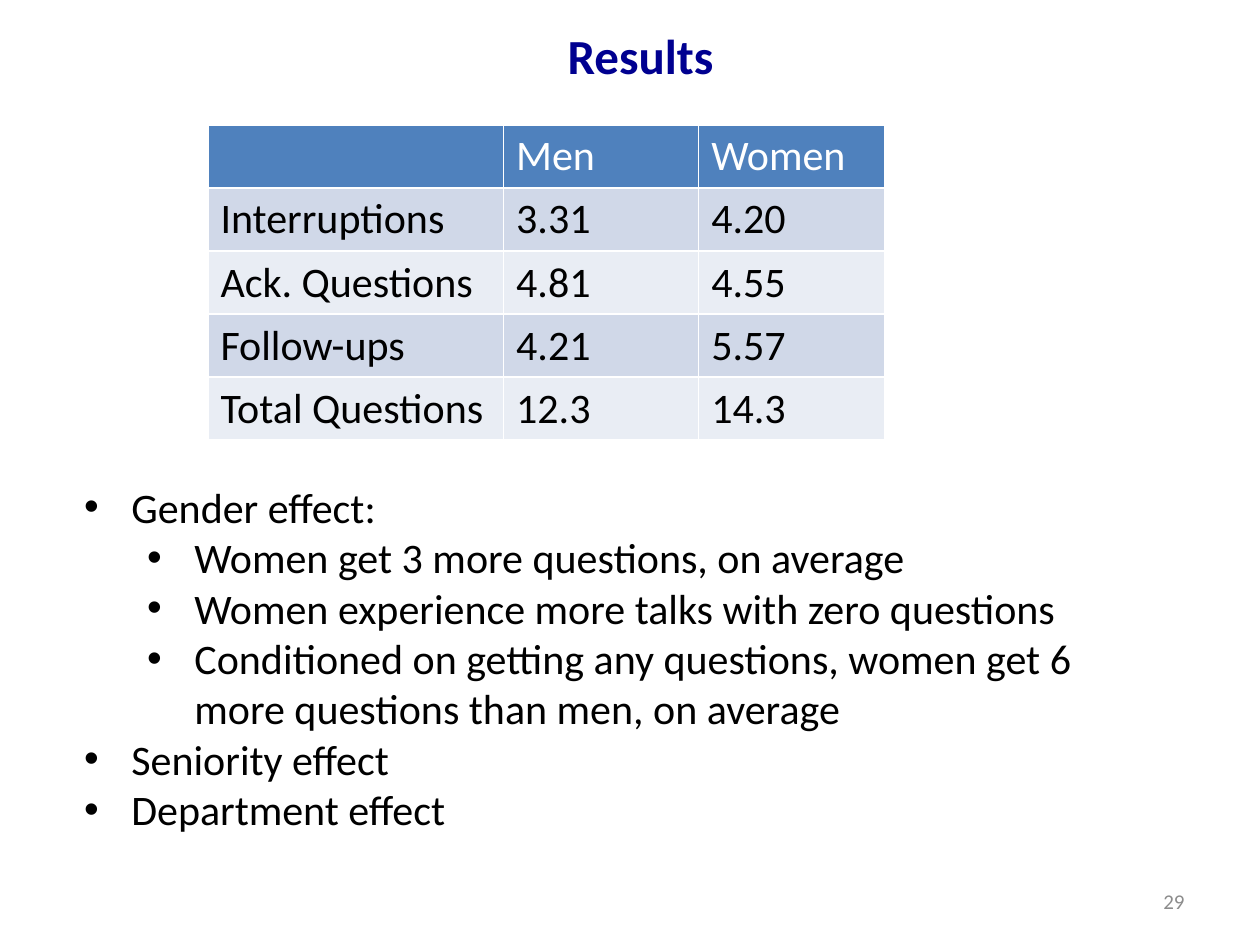
import dataclasses
import typing

import lxml.etree
import pptx
import pptx.dml.color
import pptx.enum.text
import pptx.oxml.ns
import pptx.util

Pt = pptx.util.Pt
Align = pptx.enum.text.PP_ALIGN
Anchor = pptx.enum.text.MSO_ANCHOR


@dataclasses.dataclass(frozen=True)
class Theme:
    font: str = "Calibri"
    title_size: float = 28
    body_size: float = 24
    number_size: float = 12
    title: str = "000090"
    text: str = "000000"
    number: str = "8C8C8C"
    header_text: str = "FFFFFF"
    header_fill: str = "4F81BD"
    band_fills: tuple[str, str] = ("D0D8E8", "E9EDF4")


@dataclasses.dataclass(frozen=True)
class Box:
    left: float
    top: float
    width: float
    height: float

    def lengths(self) -> tuple[int, ...]:
        return tuple(Pt(length) for length in dataclasses.astuple(self))


class Bullet(typing.NamedTuple):
    text: str
    level: int = 0


class Result(typing.NamedTuple):
    measure: str
    men: str
    women: str


THEME = Theme()
TITLE_BOX = Box(12, 0, 708, 62.5)
NUMBER_BOX = Box(516, 500.5, 168, 28.75)
TABLE_BOX = Box(118.8, 71.3, 387, 180)
BULLET_BOX = Box(41, 271.5, 612.5, 211)
COLUMN_WIDTHS = (169, 111.5, 106.5)
BULLET_HANG = 27
LEVEL_STEP = 36

RESULTS = (
    Result("", "Men", "Women"),
    Result("Interruptions", "3.31", "4.20"),
    Result("Ack. Questions", "4.81", "4.55"),
    Result("Follow-ups", "4.21", "5.57"),
    Result("Total Questions", "12.3", "14.3"),
)

BULLETS = (
    Bullet("Gender effect:"),
    Bullet("Women get 3 more questions, on average", 1),
    Bullet("Women experience more talks with zero questions", 1),
    Bullet("Conditioned on getting any questions, women get 6 more questions than men, on average", 1),
    Bullet("Seniority effect"),
    Bullet("Department effect"),
)


def rgb(value: str) -> pptx.dml.color.RGBColor:
    return pptx.dml.color.RGBColor.from_string(value)


def write(para, text: str, size: float, color: str, bold: bool = False) -> None:
    para.text = text
    para.font.name = THEME.font
    para.font.size = Pt(size)
    para.font.bold = bold
    para.font.color.rgb = rgb(color)


def draw_title(page, text: str) -> None:
    title = page.shapes.title
    title.left, title.top, title.width, title.height = TITLE_BOX.lengths()
    title.text_frame.vertical_anchor = Anchor.MIDDLE
    para = title.text_frame.paragraphs[0]
    para.alignment = Align.CENTER
    write(para, text, THEME.title_size, THEME.title, bold=True)


def draw_number(page, text: str) -> None:
    frame = page.shapes.add_textbox(*NUMBER_BOX.lengths()).text_frame
    frame.word_wrap = True
    frame.vertical_anchor = Anchor.MIDDLE
    para = frame.paragraphs[0]
    para.alignment = Align.RIGHT
    write(para, text, THEME.number_size, THEME.number)


def draw_table(page, results: tuple[Result, ...]) -> None:
    table = page.shapes.add_table(len(results), len(COLUMN_WIDTHS), *TABLE_BOX.lengths()).table
    for column, width in zip(table.columns, COLUMN_WIDTHS):
        column.width = Pt(width)
    for row, result in enumerate(results):
        header = row == 0
        fill = THEME.header_fill if header else THEME.band_fills[(row - 1) % 2]
        color = THEME.header_text if header else THEME.text
        for column, text in enumerate(result):
            cell = table.cell(row, column)
            cell.fill.solid()
            cell.fill.fore_color.rgb = rgb(fill)
            write(cell.text_frame.paragraphs[0], text, THEME.body_size, color)


def add_bullet(para, level: int) -> None:
    para.level = level
    properties = para._p.get_or_add_pPr()
    properties.set("marL", str(Pt(BULLET_HANG + level * LEVEL_STEP)))
    properties.set("indent", str(-Pt(BULLET_HANG)))
    marks = (("a:buFont", "typeface", "Arial"), ("a:buChar", "char", "•"))
    for position, (tag, name, value) in enumerate(marks):
        mark = lxml.etree.Element(pptx.oxml.ns.qn(tag))
        mark.set(name, value)
        properties.insert(position, mark)


def draw_bullets(page, bullets: tuple[Bullet, ...]) -> None:
    frame = page.shapes.add_textbox(*BULLET_BOX.lengths()).text_frame
    frame.word_wrap = True
    frame.auto_size = pptx.enum.text.MSO_AUTO_SIZE.SHAPE_TO_FIT_TEXT
    for index, bullet in enumerate(bullets):
        para = frame.add_paragraph() if index else frame.paragraphs[0]
        write(para, bullet.text, THEME.body_size, THEME.text)
        add_bullet(para, bullet.level)


def main() -> None:
    deck = pptx.Presentation()
    deck.slide_width, deck.slide_height = Pt(720), Pt(540)
    page = deck.slides.add_slide(deck.slide_layouts.get_by_name("Title Only"))
    draw_title(page, "Results")
    draw_number(page, "29")
    draw_table(page, RESULTS)
    draw_bullets(page, BULLETS)
    deck.save("out.pptx")


if __name__ == "__main__":
    main()
